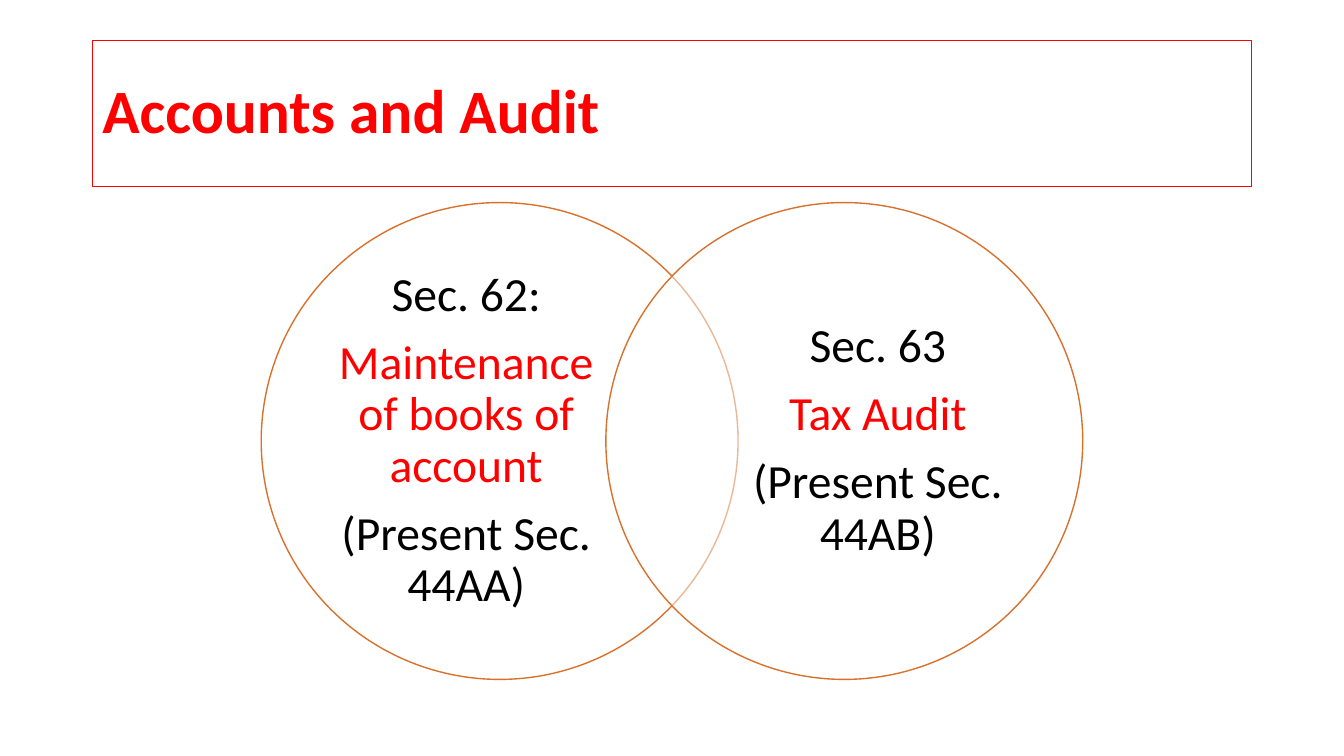
from dataclasses import dataclass

from lxml.etree import SubElement
from pptx import Presentation
from pptx.dml.color import RGBColor
from pptx.enum.shapes import MSO_SHAPE
from pptx.enum.text import MSO_ANCHOR, PP_ALIGN
from pptx.oxml.ns import qn
from pptx.util import Pt


@dataclass(frozen=True)
class Theme:
    """Colours, font and type sizes of the slide."""
    red: RGBColor = RGBColor(0xFF, 0x00, 0x00)
    black: RGBColor = RGBColor(0x00, 0x00, 0x00)
    white: RGBColor = RGBColor(0xFF, 0xFF, 0xFF)
    orange: RGBColor = RGBColor(0xD7, 0x71, 0x2C)
    font: str = "Calibri"
    title_size: float = 44
    body_size: float = 34


THEME = Theme()


def write_paragraph(paragraph, text, *, size, color, bold=False,
                    align=PP_ALIGN.LEFT, space_after=0):
    """Fill one paragraph with formatted text."""
    paragraph.alignment = align
    paragraph.line_spacing = 0.9
    paragraph.space_before = Pt(0)
    paragraph.space_after = Pt(space_after)
    run = paragraph.add_run()
    run.text = text
    run.font.name = THEME.font
    run.font.size = Pt(size)
    run.font.bold = bold
    run.font.color.rgb = color


def add_text_box(slide, left, top, width, height):
    """Add a wrapping text box anchored in the middle."""
    box = slide.shapes.add_textbox(Pt(left), Pt(top), Pt(width), Pt(height))
    box.text_frame.word_wrap = True
    box.text_frame.vertical_anchor = MSO_ANCHOR.MIDDLE
    return box


def add_title(slide, text, left, top, width, height):
    """Add the outlined title bar."""
    box = add_text_box(slide, left, top, width, height)
    box.line.color.rgb = THEME.red
    box.line.width = Pt(0.25)
    write_paragraph(box.text_frame.paragraphs[0], text,
                    size=THEME.title_size, color=THEME.red, bold=True)


def add_circle(slide, left, top, diameter):
    """Add one half-transparent circle."""
    circle = slide.shapes.add_shape(
        MSO_SHAPE.OVAL, Pt(left), Pt(top), Pt(diameter), Pt(diameter))
    circle.shadow.inherit = False
    circle.fill.solid()
    circle.fill.fore_color.rgb = THEME.white
    color = circle.fill._xPr.find(qn("a:solidFill"))[0]
    SubElement(color, qn("a:alpha")).set("val", "50000")
    circle.line.color.rgb = THEME.orange
    circle.line.width = Pt(1)


def add_circle_text(slide, lines, left, top, width, height):
    """Add the centred lines of one circle, the middle one in red."""
    frame = add_text_box(slide, left, top, width, height).text_frame
    frame.margin_left = frame.margin_right = Pt(0)
    frame.margin_top = frame.margin_bottom = Pt(0)
    colors = (THEME.black, THEME.red, THEME.black)
    for index, (text, color) in enumerate(zip(lines, colors)):
        paragraph = frame.add_paragraph() if index else frame.paragraphs[0]
        write_paragraph(paragraph, text, size=THEME.body_size, color=color,
                        align=PP_ALIGN.CENTER, space_after=12)


def add_venn(slide, sections, left, top, width, diameter):
    """Add two overlapping circles, with text in their outer parts."""
    text_width, text_height, outer_gap = 196.4, 260.6, 48.2
    circle_lefts = (left, left + width - diameter)
    text_lefts = (left + outer_gap, left + width - outer_gap - text_width)
    text_top = top + (diameter - text_height) / 2
    for lines, circle_left, text_left in zip(sections, circle_lefts, text_lefts):
        add_circle(slide, circle_left, top, diameter)
        add_circle_text(slide, lines, text_left, text_top,
                        text_width, text_height)


def main():
    """Build and save the presentation."""
    presentation = Presentation()
    presentation.slide_width = Pt(960)
    presentation.slide_height = Pt(540)
    slide = presentation.slides.add_slide(presentation.slide_layouts[6])
    add_title(slide, "Accounts and Audit", 66, 28.8, 828, 104.4)
    sections = (
        ("Sec. 62:", "Maintenance of books of account", "(Present Sec. 44AA)"),
        ("Sec. 63", "Tax Audit", "(Present Sec. 44AB)"),
    )
    add_venn(slide, sections, 186.6, 144.7, 586.8, 340.6)
    presentation.save("out.pptx")


if __name__ == "__main__":
    main()
